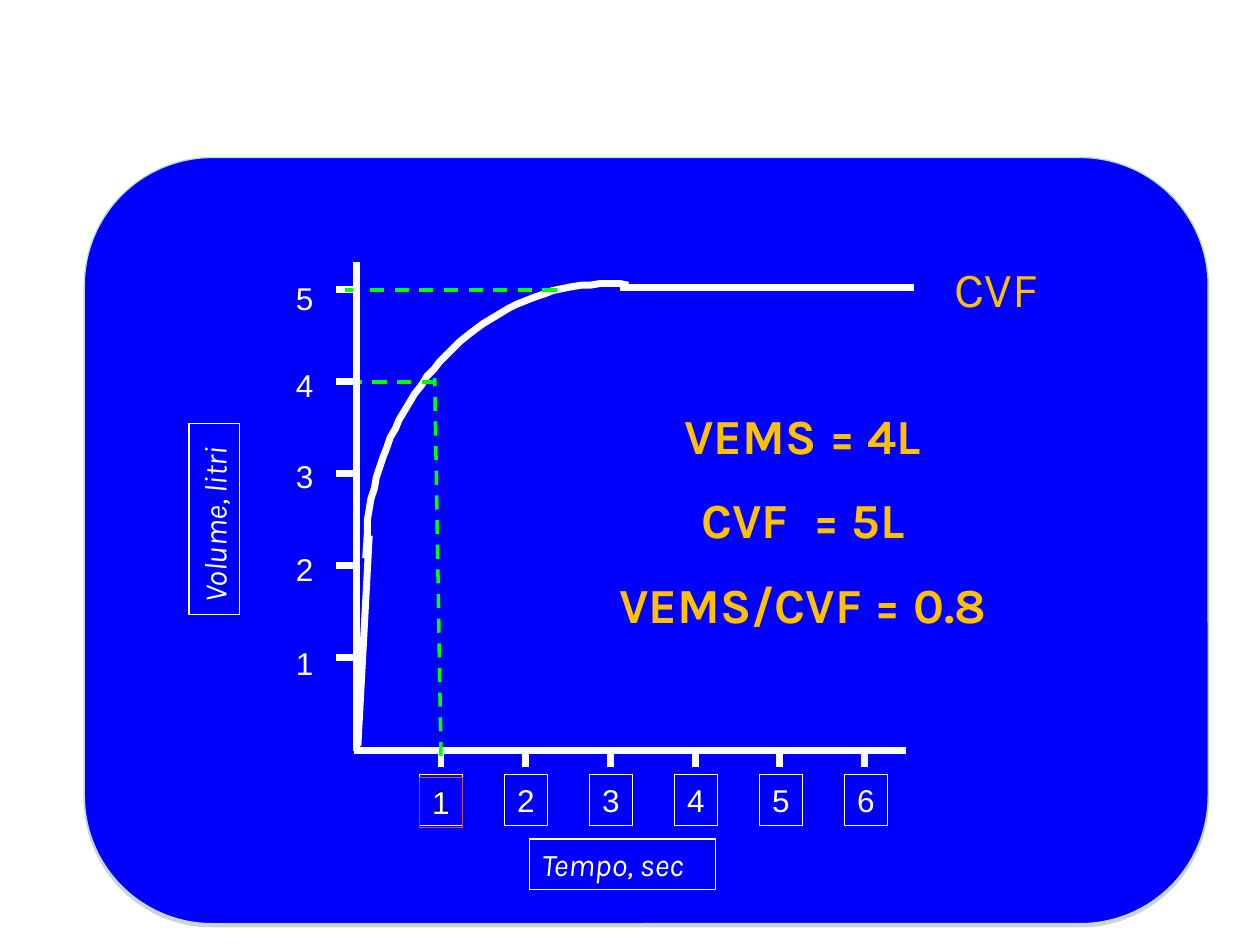
from lxml.etree import SubElement
from pptx import Presentation
from pptx.dml.color import RGBColor
from pptx.enum.dml import MSO_LINE
from pptx.enum.shapes import MSO_CONNECTOR, MSO_SHAPE
from pptx.enum.text import MSO_AUTO_SIZE, PP_ALIGN
from pptx.oxml.ns import qn
from pptx.util import Pt

COLORS = {
    "panel": "0000FF",
    "edge": "B6DCDF",
    "shadow": "808080",
    "white": "FFFFFF",
    "black": "000000",
    "gold": "FFC000",
    "green": "00FF00",
    "red": "C0504D",
}


def color(name):
    return RGBColor.from_string(COLORS[name])


def write(frame, lines, size=18, font="Arial", ink="white", bold=False,
          italic=False, align=PP_ALIGN.LEFT, before=0):
    for index, line in enumerate(lines):
        para = frame.add_paragraph() if index else frame.paragraphs[0]
        para.alignment = align
        para.space_before = Pt(before)
        span = para.add_run()
        span.text = line
        span.font.size = Pt(size)
        span.font.name = font
        span.font.bold = bold
        span.font.italic = italic
        span.font.color.rgb = color(ink)


def bezier(start, first, second, end, steps):
    for step in range(1, steps + 1):
        t = step / steps
        weights = ((1 - t) ** 3, 3 * t * (1 - t) ** 2, 3 * t ** 2 * (1 - t), t ** 3)
        yield tuple(sum(weight * value for weight, value in zip(weights, axis))
                    for axis in zip(start, first, second, end))


class Sketch:
    stroke = 4
    border = 0.75

    def __init__(self, page):
        self.page = page

    def panel(self, left, top, width, height):
        shape = self.page.shapes.add_shape(
            MSO_SHAPE.ROUNDED_RECTANGLE, Pt(left), Pt(top), Pt(width), Pt(height))
        shape.adjustments[0] = 0.167
        shape.fill.solid()
        shape.fill.fore_color.rgb = color("panel")
        shape.line.color.rgb = color("edge")
        shape.line.width = Pt(self.border)
        shape.shadow.inherit = False
        effects = shape.element.spPr.find(qn("a:effectLst"))
        shadow = SubElement(effects, qn("a:outerShdw"), blurRad="0",
                            dist=str(Pt(1.8)), dir="5400000", rotWithShape="0")
        tint = SubElement(shadow, qn("a:srgbClr"), val=COLORS["shadow"])
        SubElement(tint, qn("a:alpha"), val="35000")

    def line(self, x1, y1, x2, y2):
        line = self.page.shapes.add_connector(
            MSO_CONNECTOR.STRAIGHT, Pt(x1), Pt(y1), Pt(x2), Pt(y2))
        line.line.color.rgb = color("white")
        line.line.width = Pt(self.stroke)
        SubElement(line.element.spPr, qn("a:effectLst"))
        return line

    def guide(self, x1, y1, x2, y2):
        line = self.line(x1, y1, x2, y2).line
        line.color.rgb = color("green")
        line.width = Pt(2)
        line.dash_style = MSO_LINE.DASH

    def curve(self, points):
        builder = self.page.shapes.build_freeform(*points[0], scale=Pt(1))
        builder.add_line_segments(points[1:], close=False)
        shape = builder.convert_to_shape()
        shape.fill.background()
        shape.line.color.rgb = color("white")
        shape.line.width = Pt(self.stroke)
        shape.shadow.inherit = False

    def text(self, left, top, width, height, *lines, outline=None, turn=0, **style):
        box = self.page.shapes.add_textbox(Pt(left), Pt(top), Pt(width), Pt(height))
        box.rotation = turn
        if outline:
            box.line.color.rgb = color(outline)
            box.line.width = Pt(self.border)
        box.text_frame.word_wrap = True
        box.text_frame.auto_size = MSO_AUTO_SIZE.NONE
        write(box.text_frame, lines, **style)


def main():
    deck = Presentation()
    deck.slide_width, deck.slide_height = Pt(720), Pt(540)
    sketch = Sketch(deck.slides.add_slide(deck.slide_layouts[6]))

    sketch.panel(48.2, 90, 642.2, 437.8)

    axis_x, axis_y = 203.8, 429
    sketch.line(202.3, axis_y, 517.7, axis_y)
    sketch.text(239.8, 442.8, 24.5, 28.8, "1", outline="white", ink="black")
    for second in range(1, 7):
        tick = 203.6 + 48.4 * second
        sketch.line(tick, 428, tick, 438.5)
        first = second == 1
        sketch.text(191.2 + 48.6 * second, 444.2 if first else 442.8, 24.5, 28.8,
                    str(second), outline="red" if first else "white")

    label_tops = (364.3, 311, 257.8, 205.9, 156.2)
    for litre, label_top in enumerate(label_tops, 1):
        tick = 428.5 - 52.6 * litre
        sketch.line(202.3, tick, 192.2, tick)
        sketch.text(162, label_top, 24.5, 28.8, str(litre))

    sketch.line(204.5, 426.2, 211, 306)
    sketch.line(354.2, 164.2, 522, 164.2)
    start, bend, end = (208.8, 319), (209.5, 303.8), (359.3, 162.7)
    sketch.curve([start, bend, *bezier(bend, (217.4, 218.9), (284.4, 155.5), end, 40)])

    sketch.guide(252, 432, 248.4, 216)
    sketch.guide(249.1, 218.2, 201.6, 218.2)
    sketch.guide(197.3, 165.6, 323.3, 165.6)
    sketch.line(axis_x, axis_y, axis_x, 149.8)

    axis_title = dict(font="Karla", italic=True, outline="white")
    sketch.text(67.7, 282.2, 109.4, 28.8, "Volume, litri", turn=270, **axis_title)
    sketch.text(302.4, 479.5, 106.6, 28.8, "Tempo, sec", **axis_title)

    result = dict(font="Karla", size=28, ink="gold")
    sketch.text(538.6, 144, 64, 41, "CVF", **result)
    sketch.text(311.8, 228.2, 293.8, 143.3, "VEMS = 4L", "CVF  = 5L", "VEMS/CVF = 0.8",
                bold=True, align=PP_ALIGN.CENTER, before=14.5, **result)

    deck.save("out.pptx")


if __name__ == "__main__":
    main()
